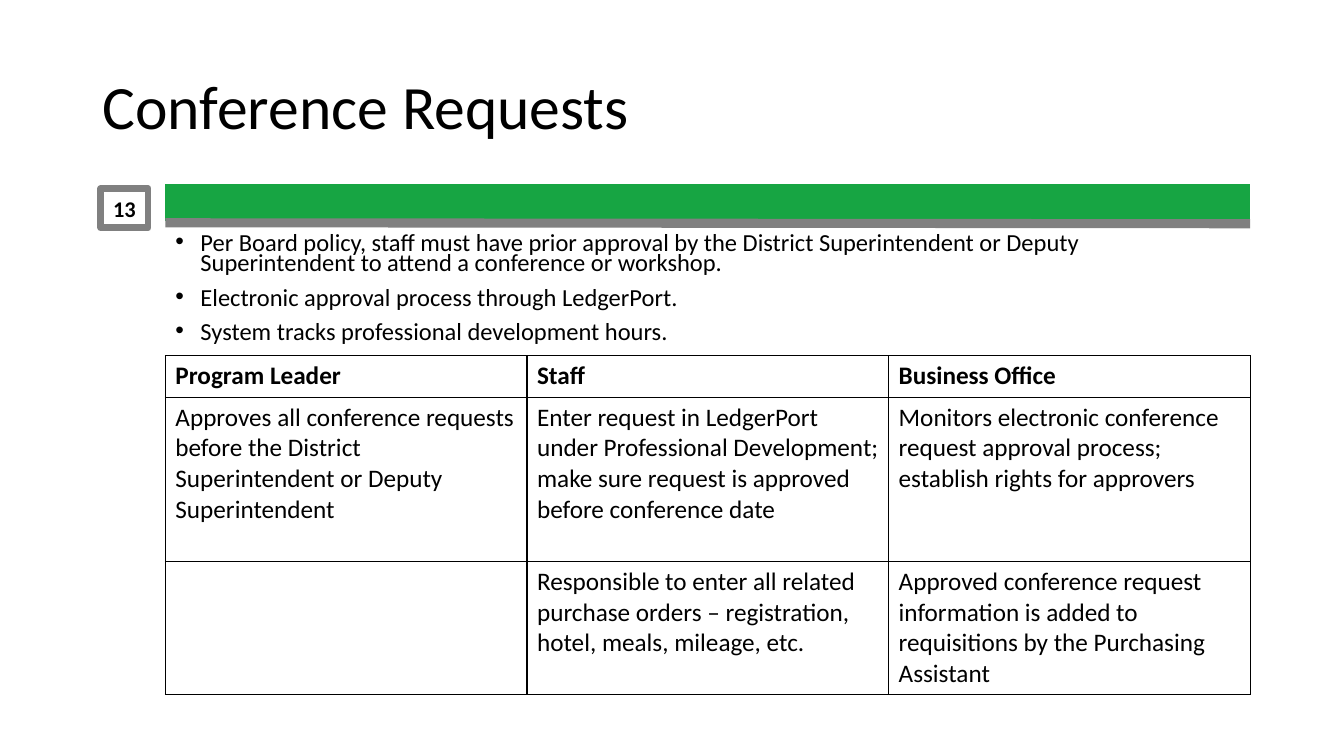
from dataclasses import dataclass

from lxml.etree import SubElement
from pptx import Presentation
from pptx.dml.color import RGBColor
from pptx.enum.shapes import MSO_CONNECTOR, MSO_SHAPE
from pptx.enum.text import MSO_ANCHOR, PP_ALIGN
from pptx.oxml import parse_xml
from pptx.oxml.ns import nsdecls, qn
from pptx.util import Inches, Pt

TITLE = "Conference Requests"
PAGE_NUMBER = "13"
POLICY_POINTS = [
    "Per Board policy, staff must have prior approval by the District Superintendent"
    " or Deputy Superintendent to attend a conference or workshop.",
    "Electronic approval process through LedgerPort.",
    "System tracks professional development hours.",
]
DUTIES = [
    ("Program Leader", "Staff", "Business Office"),
    (
        "Approves all conference requests before the District Superintendent"
        " or Deputy Superintendent",
        "Enter request in LedgerPort under Professional Development; make sure"
        " request is approved before conference date",
        "Monitors electronic conference request approval process; establish"
        " rights for approvers",
    ),
    (
        "",
        "Responsible to enter all related purchase orders – registration, hotel,"
        " meals, mileage, etc.",
        "Approved conference request information is added to requisitions by the"
        " Purchasing Assistant",
    ),
]


@dataclass(frozen=True)
class Theme:
    font: str = "Calibri"
    black: str = "000000"
    green: str = "17A543"
    gray: str = "808080"
    title_size: float = 44
    bullet_size: float = 17.5
    number_size: float = 16
    table_size: float = 18


THEME = Theme()
SLIDE_WIDTH, SLIDE_HEIGHT = 13.33, 7.5
CONTENT_LEFT, CONTENT_WIDTH = 1.64, 10.76
CONTENT_RIGHT = CONTENT_LEFT + CONTENT_WIDTH
TABLE_TOP = 3.53
ROW_HEIGHTS = (0.41, 1.63, 1.32)
BULLET_INDENT = 0.25


def add_run(paragraph, text, size, bold=False):
    run = paragraph.add_run()
    run.text = text
    run.font.name = THEME.font
    run.font.size = Pt(size)
    run.font.bold = bold
    run.font.color.rgb = RGBColor.from_string(THEME.black)


def add_text_box(slide, left, top, width, height, anchor):
    box = slide.shapes.add_textbox(*map(Inches, (left, top, width, height)))
    box.text_frame.word_wrap = True
    box.text_frame.vertical_anchor = anchor
    return box.text_frame


def add_title(slide):
    frame = add_text_box(slide, 0.92, 0.36, 11.5, 1.45, MSO_ANCHOR.MIDDLE)
    paragraph = frame.paragraphs[0]
    paragraph.line_spacing = 0.9
    add_run(paragraph, TITLE, THEME.title_size)


def add_policy_points(slide):
    frame = add_text_box(slide, CONTENT_LEFT, 2.28, CONTENT_WIDTH, 1.24, MSO_ANCHOR.TOP)
    for index, point in enumerate(POLICY_POINTS):
        paragraph = frame.add_paragraph() if index else frame.paragraphs[0]
        paragraph.line_spacing = 0.7
        paragraph.space_before = Pt(10)
        properties = paragraph._p.get_or_add_pPr()
        properties.set("marL", str(Inches(BULLET_INDENT)))
        properties.set("indent", str(-Inches(BULLET_INDENT)))
        SubElement(properties, qn("a:buFont"), typeface="Arial")
        SubElement(properties, qn("a:buChar"), char="•")
        add_run(paragraph, point, THEME.bullet_size)


def add_rule(slide, start_y, end_y, color, weight):
    """Draw a line across the content width."""
    ends = map(Inches, (CONTENT_LEFT, start_y, CONTENT_RIGHT, end_y))
    rule = slide.shapes.add_connector(MSO_CONNECTOR.STRAIGHT, *ends)
    rule.line.color.rgb = RGBColor.from_string(color)
    rule.line.width = Pt(weight)
    SubElement(rule._element.spPr, qn("a:effectLst"))


def add_page_number(slide):
    box = slide.shapes.add_shape(
        MSO_SHAPE.RECTANGLE, *map(Inches, (1, 1.87, 0.47, 0.39))
    )
    box.shadow.inherit = False
    box.fill.background()
    box.line.color.rgb = RGBColor.from_string(THEME.gray)
    box.line.width = Pt(4.75)
    frame = box.text_frame
    frame.word_wrap = False
    frame.margin_left = frame.margin_right = 0
    frame.margin_top = frame.margin_bottom = 0
    frame.vertical_anchor = MSO_ANCHOR.MIDDLE
    paragraph = frame.paragraphs[0]
    paragraph.alignment = PP_ALIGN.CENTER
    add_run(paragraph, PAGE_NUMBER, THEME.number_size, bold=True)


def set_borders(cell):
    properties = cell._tc.get_or_add_tcPr()
    for position, side in enumerate(("lnL", "lnR", "lnT", "lnB")):
        border = parse_xml(
            f'<a:{side} {nsdecls("a")} w="{Pt(1)}"><a:solidFill>'
            f'<a:srgbClr val="{THEME.black}"/></a:solidFill></a:{side}>'
        )
        properties.insert(position, border)


def add_duties_table(slide):
    row_count, column_count = len(DUTIES), len(DUTIES[0])
    bounds = (CONTENT_LEFT, TABLE_TOP, CONTENT_WIDTH, sum(ROW_HEIGHTS))
    frame = slide.shapes.add_table(row_count, column_count, *map(Inches, bounds))
    table = frame.table
    table.horz_banding = False
    for row_index, texts in enumerate(DUTIES):
        table.rows[row_index].height = Inches(ROW_HEIGHTS[row_index])
        for column_index, text in enumerate(texts):
            cell = table.cell(row_index, column_index)
            cell.fill.background()
            set_borders(cell)
            if text:
                paragraph = cell.text_frame.paragraphs[0]
                add_run(paragraph, text, THEME.table_size, bold=row_index == 0)


def main():
    presentation = Presentation()
    presentation.slide_width = Inches(SLIDE_WIDTH)
    presentation.slide_height = Inches(SLIDE_HEIGHT)
    slide = presentation.slides.add_slide(presentation.slide_layouts[6])
    add_title(slide)
    add_policy_points(slide)
    add_rule(slide, 2.01, 2.01, THEME.green, 26.25)
    add_page_number(slide)
    add_rule(slide, 2.21, 2.22, THEME.gray, 6.5)
    add_duties_table(slide)
    presentation.save("out.pptx")


if __name__ == "__main__":
    main()
